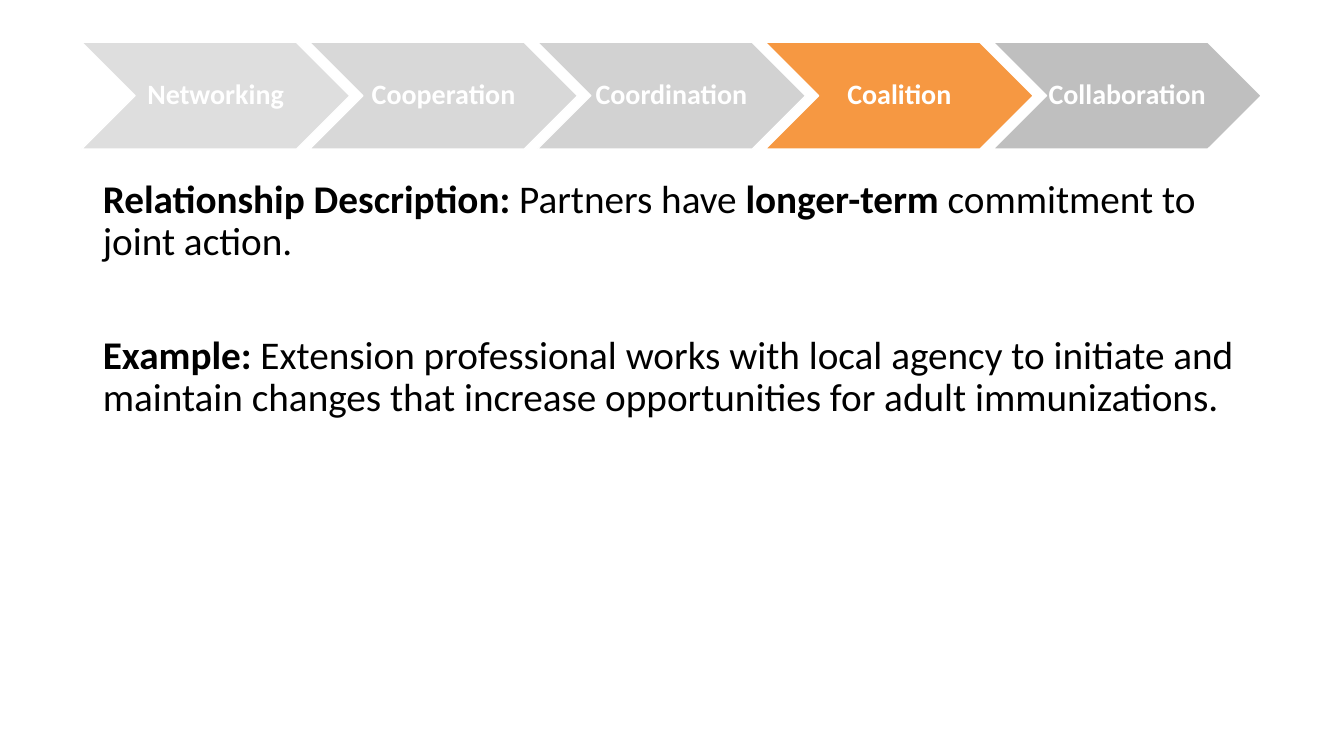
from lxml import etree
from pptx import Presentation
from pptx import util as u
from pptx.dml.color import RGBColor
from pptx.enum import shapes, text
from pptx.oxml import ns

STAGES = [
    ("Networking", "BFBFBF", 50),
    ("Cooperation", "BFBFBF", 60),
    ("Coordination", "BFBFBF", 70),
    ("Coalition", "F58622", 85),
    ("Collaboration", "BFBFBF", 100),
]
DESCRIPTION = [
    ("Relationship Description: ", True),
    ("Partners have ", False),
    ("longer-term", True),
    (" commitment to joint action.", False),
]
EXAMPLE = [
    ("Example: ", True),
    ("Extension professional works with local agency to initiate and maintain "
     "changes that increase opportunities for adult immunizations.", False),
]


def set_color(color_format, value):
    """Set a color from a hex string."""
    color_format.rgb = RGBColor.from_string(value)


def set_font(font, size, color):
    """Apply the slide typeface with a size and color."""
    font.name = "Calibri"
    font.size = u.Pt(size)
    set_color(font.color, color)


def set_opacity(shape, percent):
    """Make the solid fill of a shape partly transparent."""
    color = shape._element.spPr.find(ns.qn("a:solidFill"))[0]
    etree.SubElement(color, ns.qn("a:alpha"), val=str(percent * 1000))


def add_stage(slide, left, label, color, opacity):
    """Add one labelled chevron of the relationship scale."""
    chevron = slide.shapes.add_shape(
        shapes.MSO_SHAPE.CHEVRON, u.Inches(left), u.Inches(0.42),
        u.Inches(2.66), u.Inches(1.06))
    chevron.shadow.inherit = False
    chevron.fill.solid()
    set_color(chevron.fill.fore_color, color)
    if opacity < 100:
        set_opacity(chevron, opacity)
    set_color(chevron.line.color, "FFFFFF")
    chevron.line.width = u.Pt(1)
    frame = chevron.text_frame
    frame.margin_left = frame.margin_right = 0
    frame.margin_top = frame.margin_bottom = u.Inches(0.01)
    frame.vertical_anchor = text.MSO_ANCHOR.MIDDLE
    paragraph = frame.paragraphs[0]
    paragraph.text = label
    paragraph.alignment = text.PP_ALIGN.CENTER
    paragraph.line_spacing = 0.9
    set_font(paragraph.font, 20, "FFFFFF")
    paragraph.font.bold = True


def fill_paragraph(paragraph, parts, space_before):
    """Write an unbulleted paragraph of bold and regular parts."""
    properties = paragraph._p.get_or_add_pPr()
    properties.set("marL", "0")
    properties.set("indent", "0")
    etree.SubElement(properties, ns.qn("a:buNone"))
    paragraph.line_spacing = 0.9
    paragraph.space_before = u.Pt(space_before)
    set_font(paragraph.font, 28, "000000")
    for words, bold in parts:
        run = paragraph.add_run()
        run.text = words
        run.font.bold = bold


def fill_body(body):
    """Place the body and write the description and the example."""
    body.left, body.top = u.Inches(0.92), u.Inches(1.73)
    body.width, body.height = u.Inches(11.5), u.Inches(5.36)
    frame = body.text_frame
    frame.auto_size = text.MSO_AUTO_SIZE.NONE
    fill_paragraph(frame.paragraphs[0], DESCRIPTION, 10)
    fill_paragraph(frame.add_paragraph(), EXAMPLE, 51)


def main():
    """Build and save the coalition slide."""
    presentation = Presentation()
    presentation.slide_width = u.Inches(13.33)
    presentation.slide_height = u.Inches(7.5)
    slide = presentation.slides.add_slide(presentation.slide_layouts[1])
    title = slide.shapes.title._element
    title.getparent().remove(title)
    for index, (label, color, opacity) in enumerate(STAGES):
        add_stage(slide, 0.81 + 2.26 * index, label, color, opacity)
    fill_body(slide.placeholders[1])
    presentation.save("out.pptx")


main()
